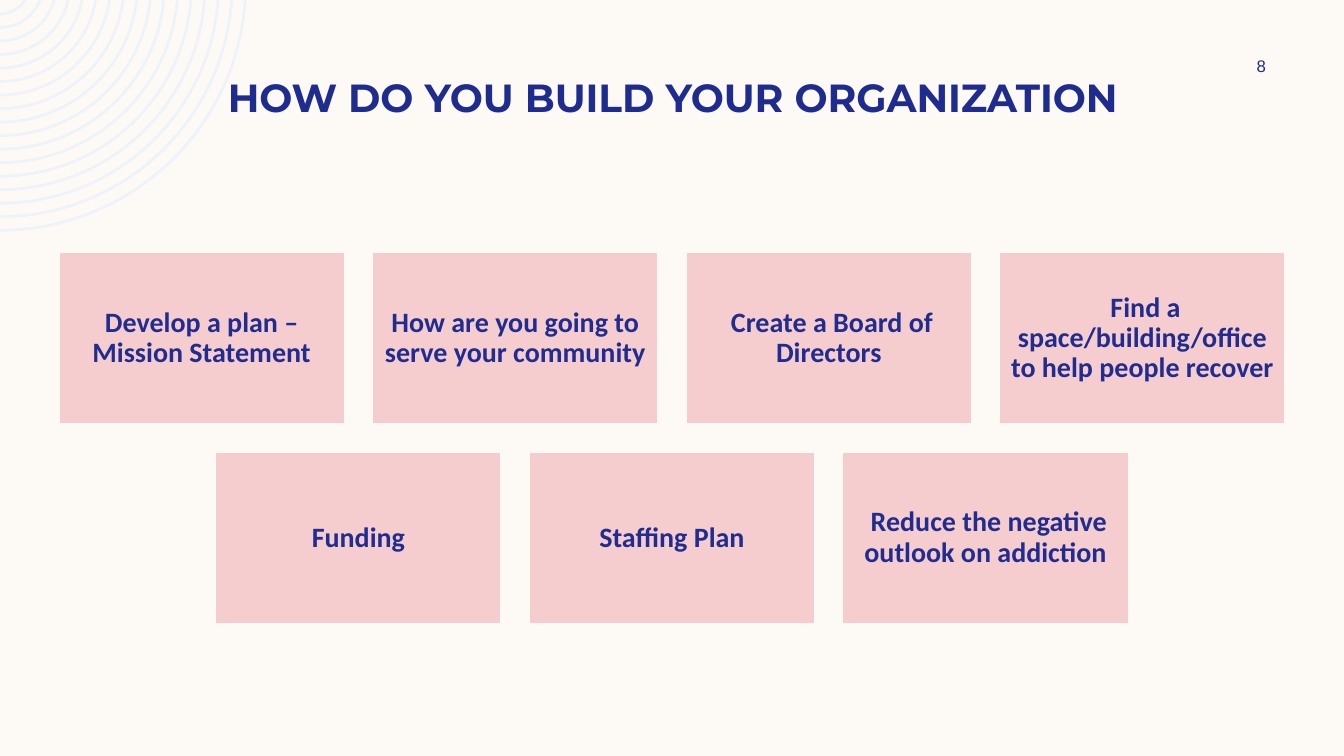
from dataclasses import dataclass
from math import asin, cos, pi, sin, tan

from lxml.etree import SubElement
from pptx import Presentation
from pptx.dml.color import RGBColor
from pptx.enum.shapes import MSO_SHAPE
from pptx.enum.text import MSO_ANCHOR, PP_ALIGN
from pptx.oxml.ns import qn
from pptx.shapes.autoshape import Shape
from pptx.slide import Slide
from pptx.util import Emu, Pt

PX = 6350  # EMU per px, 144 px to the inch
SLIDE_W, SLIDE_H = 1920, 1080


@dataclass(frozen=True)
class Theme:
    background: RGBColor = RGBColor.from_string("FDFAF6")
    rings: RGBColor = RGBColor.from_string("EEF3FA")
    card: RGBColor = RGBColor.from_string("F5CDCE")
    heading: RGBColor = RGBColor.from_string("1F2C8F")
    card_text: RGBColor = RGBColor.from_string("202C8F")
    title_size: Pt = Pt(28)
    card_size: Pt = Pt(20)
    number_size: Pt = Pt(12)
    card_line: Pt = Pt(1)


@dataclass(frozen=True)
class Box:
    left: int
    top: int
    width: int
    height: int

    def emu(self) -> list[Emu]:
        return [px(n) for n in (self.left, self.top, self.width, self.height)]


@dataclass(frozen=True)
class Card:
    text: str
    box: Box


THEME = Theme()

# Card grid: each row is centred on the slide
CARD_W, CARD_H, GAP = 408, 245, 40
ROWS_TOP = 361
CARD_INSET = 11
ROWS = (
    (
        "Develop a plan – Mission Statement",
        "How are you going to serve your community",
        " Create a Board of Directors",
        " Find a space/building/office to help people recover",
    ),
    (" Funding ", "Staffing Plan", " Reduce the negative outlook on addiction"),
)

# Rings around a centre just above the slide's corner
RING_COUNT, RING_WIDTH = 17, 4
RING_OUTER, RING_INNER = 353, 44
RING_RISE = 22


def px(n: float) -> Emu:
    return Emu(round(n * PX))


def set_attrs(target: object, values: dict[str, object]) -> None:
    for name, value in values.items():
        setattr(target, name, value)


def write(sp: Shape, text: str, font: dict[str, object], color: RGBColor,
          frame: dict[str, object], para: dict[str, object]) -> None:
    tf = sp.text_frame
    set_attrs(tf, {"word_wrap": True, **frame})
    p = tf.paragraphs[0]
    set_attrs(p, {"alignment": PP_ALIGN.CENTER, **para})
    r = p.add_run()
    r.text = text
    set_attrs(r.font, font)
    r.font.color.rgb = color


def arc(radius: float) -> list[tuple[int, int]]:
    """Bezier points from the slide's top edge round to its left edge."""
    a = asin(RING_RISE / radius)
    handle = radius * 4 / 3 * tan((pi / 2 - a) / 4)
    x, y = radius * cos(a), radius * sin(a)
    points = [(x, y), (x - handle * sin(a), y + handle * cos(a)),
              (handle, radius), (0, radius)]
    return [(px(x), px(y - RING_RISE)) for x, y in points]


def curve_rings(sp: Shape) -> None:
    """Turn both arcs of each ring from three line segments into one curve."""
    lines = list(sp.element.iter(qn("a:lnTo")))
    for i in range(0, len(lines), 7):
        for first in (i, i + 4):
            curve = SubElement(lines[first].getparent(), qn("a:cubicBezTo"))
            lines[first].addprevious(curve)
            for line in lines[first:first + 3]:
                curve.append(line[0])
                line.getparent().remove(line)


def draw_rings(slide: Slide) -> None:
    step = (RING_OUTER - RING_INNER) / (RING_COUNT - 1)
    rings = []
    for i in range(RING_COUNT):
        radius = RING_OUTER - i * step
        rings.append(arc(radius) + arc(radius - RING_WIDTH)[::-1])
    builder = slide.shapes.build_freeform(*rings[0][0])
    for i, points in enumerate(rings):
        if i:
            builder.move_to(*points[0])
        builder.add_line_segments(points[1:], close=True)
    sp = builder.convert_to_shape()
    curve_rings(sp)
    sp.shadow.inherit = False
    sp.fill.solid()
    sp.fill.fore_color.rgb = THEME.rings
    sp.line.fill.background()


def draw_label(slide: Slide, box: Box, text: str, font: dict[str, object],
               frame: dict[str, object], para: dict[str, object]) -> None:
    sp = slide.shapes.add_textbox(*box.emu())
    write(sp, text, font, THEME.heading, frame, para)


def layout_cards() -> list[Card]:
    cards = []
    for row, texts in enumerate(ROWS):
        row_w = len(texts) * (CARD_W + GAP) - GAP
        left = (SLIDE_W - row_w) // 2
        top = ROWS_TOP + row * (CARD_H + GAP)
        for col, text in enumerate(texts):
            box = Box(left + col * (CARD_W + GAP), top, CARD_W, CARD_H)
            cards.append(Card(text, box))
    return cards


def draw_card(slide: Slide, card: Card) -> None:
    sp = slide.shapes.add_shape(MSO_SHAPE.RECTANGLE, *card.box.emu())
    sp.shadow.inherit = False
    sp.fill.solid()
    sp.fill.fore_color.rgb = THEME.card
    sp.line.color.rgb = THEME.background
    sp.line.width = THEME.card_line
    sides = ("left", "top", "right", "bottom")
    insets = {f"margin_{side}": px(CARD_INSET) for side in sides}
    write(sp, card.text,
          {"name": "Calibri", "size": THEME.card_size, "bold": True},
          THEME.card_text,
          {"vertical_anchor": MSO_ANCHOR.MIDDLE, **insets},
          {"line_spacing": 0.9, "space_after": Pt(7)})


def main() -> None:
    prs = Presentation()
    set_attrs(prs, {"slide_width": px(SLIDE_W), "slide_height": px(SLIDE_H)})
    slide = prs.slides.add_slide(prs.slide_layouts[6])

    # Background
    slide.background.fill.solid()
    slide.background.fill.fore_color.rgb = THEME.background
    draw_rings(slide)

    # Title and slide number
    draw_label(slide, Box(121, 105, 1680, 58), "HOW DO YOU BUILD YOUR ORGANIZATION",
               {"name": "Montserrat", "size": THEME.title_size, "bold": True},
               {"vertical_anchor": MSO_ANCHOR.TOP}, {"line_spacing": 0.9})
    draw_label(slide, Box(1724, 72, 156, 43), "8",
               {"name": "Arial", "size": THEME.number_size},
               {"vertical_anchor": MSO_ANCHOR.MIDDLE}, {"space_after": Pt(6)})

    # Cards
    for card in layout_cards():
        draw_card(slide, card)

    prs.save("out.pptx")


if __name__ == "__main__":
    main()
